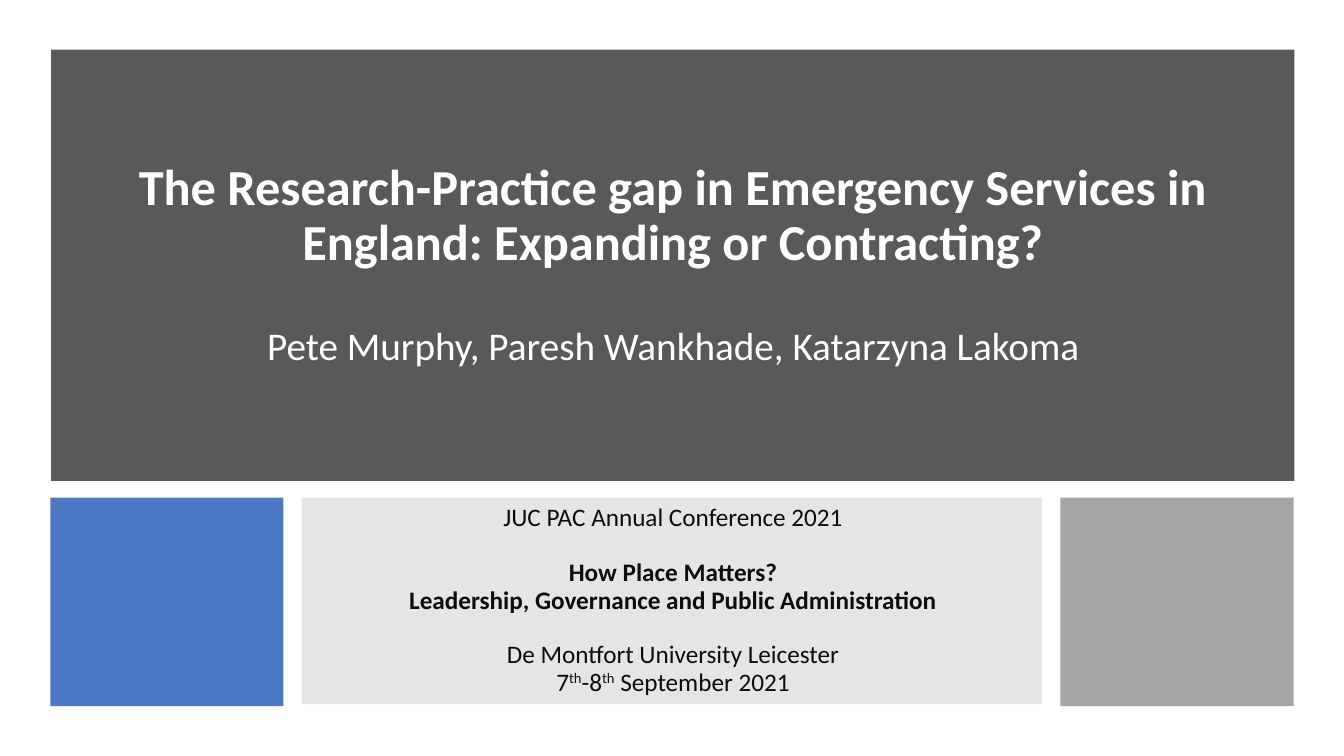
from lxml.etree import SubElement
from pptx import Presentation
from pptx.dml.color import RGBColor
from pptx.enum.shapes import MSO_SHAPE
from pptx.enum.text import MSO_ANCHOR, MSO_AUTO_SIZE, PP_ALIGN
from pptx.oxml.ns import qn
from pptx.util import Pt

COLORS = {
    "banner": "595959",
    "blue": "4472C4",
    "panel": "7F7F7F",
    "gray": "A5A5A5",
    "white": "FFFFFF",
    "ink": "0D0D0D",
}

prs = Presentation()
prs.slide_width, prs.slide_height = Pt(960), Pt(540)
s = prs.slides.add_slide(prs.slide_layouts[0])
title, subtitle = s.placeholders


def fill_text(sp, box, color, paragraphs):
    """Place a placeholder and write (space before, size, bold, runs) paragraphs."""
    sp.left, sp.top, sp.width, sp.height = map(Pt, box)
    tf = sp.text_frame
    frame_format = {"word_wrap": True, "auto_size": MSO_AUTO_SIZE.NONE,
                    "vertical_anchor": MSO_ANCHOR.MIDDLE}
    for name, value in frame_format.items():
        setattr(tf, name, value)
    for i, (before, size, bold, runs) in enumerate(paragraphs):
        p = tf.add_paragraph() if i else tf.paragraphs[0]
        para_format = {"alignment": PP_ALIGN.CENTER, "line_spacing": 0.9,
                       "space_before": Pt(before), "space_after": Pt(0)}
        for name, value in para_format.items():
            setattr(p, name, value)
        for text in runs:
            r = p.add_run()
            r.text = text
            for name, value in {"name": "Calibri", "size": Pt(size), "bold": bold}.items():
                setattr(r.font, name, value)
            r.font.color.rgb = RGBColor.from_string(COLORS[color])
            if text == "th":  # raised ordinal ending
                r._r.get_or_add_rPr().set("baseline", "30000")


# Banner and the three blocks below it: left, top, width, height, colour, opacity %
blocks = [
    (36.5, 35.5, 888, 308, "banner", 100),
    (36, 355.5, 166.5, 149, "blue", 95),
    (215.5, 355.5, 529, 147.5, "panel", 20),
    (757.5, 355.5, 166.5, 149, "gray", 100),
]
for *box, color, opacity in blocks:
    sp = s.shapes.add_shape(MSO_SHAPE.RECTANGLE, *map(Pt, box))
    sp.shadow.inherit = False
    sp.line.fill.background()
    sp.fill.solid()
    sp.fill.fore_color.rgb = RGBColor.from_string(COLORS[color])
    if opacity < 100:
        clr = sp._element.spPr.find(qn("a:solidFill")).find(qn("a:srgbClr"))
        SubElement(clr, qn("a:alpha")).set("val", str(opacity * 1000))

# Title and authors
fill_text(title, (86.5, 86.5, 788.5, 206.5), "white", [
    (0, 36, True, ["The Research-Practice gap in Emergency Services in England: "
                   "Expanding or Contracting?"]),
    (39.5, 28, False, ["Pete Murphy, Paresh Wankhade, Katarzyna Lakoma"]),
])

# Conference, theme, place and date
fill_text(subtitle, (254, 355.5, 453.5, 147.5), "ink", [
    (0, 18, False, ["JUC PAC Annual Conference 2021"]),
    (19.75, 18, True, ["How Place Matters?"]),
    (0, 18, True, ["Leadership, Governance and Public Administration"]),
    (19.75, 18, False, ["De Montfort University Leicester"]),
    (0, 18, False, ["7", "th", "-8", "th", " September 2021"]),
])

# Bring the text in front of the blocks
for sp in (title, subtitle):
    s.shapes._spTree.append(sp._element)

prs.save("out.pptx")
